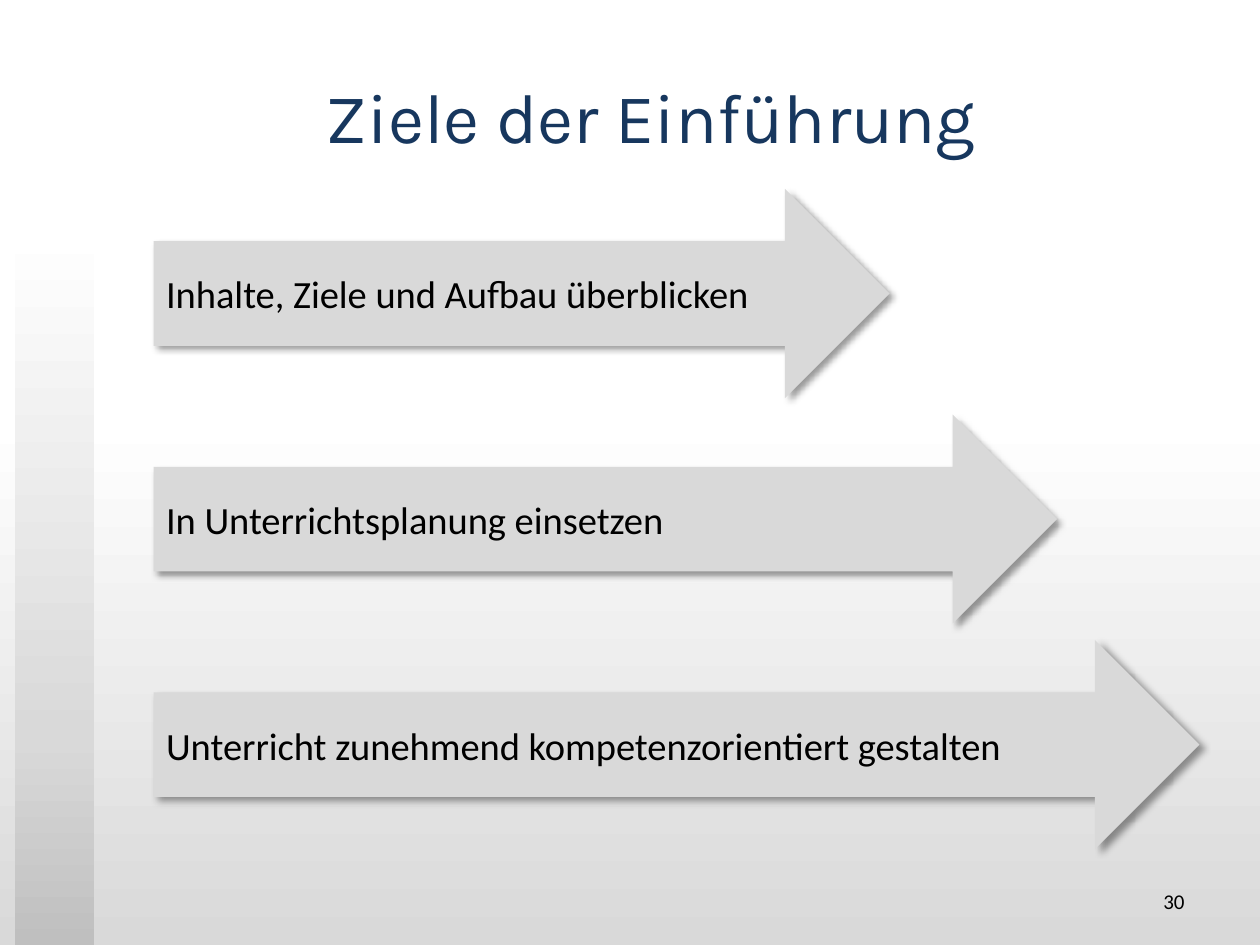
from dataclasses import dataclass, field

from lxml.etree import SubElement
from pptx import Presentation
from pptx.dml.color import RGBColor
from pptx.enum.shapes import MSO_SHAPE
from pptx.enum.text import MSO_ANCHOR, PP_ALIGN
from pptx.oxml.ns import qn
from pptx.util import Inches, Pt

COLOURS = {
    "title": "17375E",
    "text": "000000",
    "arrow": "D9D9D9",
    "white": "FFFFFF",
    "light": "D9D9D9",
    "mid": "BFBFBF",
}
CELL = 0.1
ARROW_LEFT, ARROW_TOP, ARROW_HEIGHT, ARROW_PITCH = 12.2, 15, 16.6, 17.9
GOALS = [
    ("Inhalte, Ziele und Aufbau überblicken", 58.4),
    ("In Unterrichtsplanung einsetzen", 71.7),
    ("Unterricht zunehmend kompetenzorientiert gestalten", 83),
]


def grid(*cells):
    """Turn grid columns and rows into lengths."""
    return [Inches(cell * CELL) for cell in cells]


def write(frame, text, *, size, font="Calibri", colour="text", align=PP_ALIGN.LEFT):
    """Put one formatted, vertically centred paragraph into a text frame."""
    frame.word_wrap = True
    frame.vertical_anchor = MSO_ANCHOR.MIDDLE
    para = frame.paragraphs[0]
    para.alignment = align
    span = para.add_run()
    span.text = text
    span.font.size = Pt(size)
    span.font.name = font
    span.font.color.rgb = RGBColor.from_string(COLOURS[colour])


def shade(fill, element, stops):
    """Fill from top to bottom with the given (percent, colour) stops."""
    fill.gradient()
    fill.gradient_angle = 270
    stop_list = element.xpath(".//a:gradFill/a:gsLst")[0]
    for stop in list(stop_list):
        stop_list.remove(stop)
    for percent, colour in stops:
        stop = SubElement(stop_list, qn("a:gs"), pos=str(percent * 1000))
        SubElement(stop, qn("a:srgbClr"), val=COLOURS[colour])


def cast_shadow(shape):
    """Give a shape a soft shadow to the lower right."""
    shape.shadow.inherit = False
    effects = shape.element.spPr.find(qn("a:effectLst"))
    shadow = SubElement(effects, qn("a:outerShdw"), blurRad=str(Pt(4)), dist=str(Pt(3)),
                        dir=str(45 * 60000), algn="tl", rotWithShape="0")
    colour = SubElement(shadow, qn("a:srgbClr"), val=COLOURS["text"])
    SubElement(colour, qn("a:alpha"), val="40000")


@dataclass
class GoalSlide:
    """The current page and the text sizes used on it."""

    page: object
    sizes: dict = field(default_factory=lambda: {"title": 40, "goal": 22, "number": 12})

    def background(self, stops):
        """Shade the whole page."""
        shade(self.page.background.fill, self.page.element, stops)

    def title(self, text, *cells):
        """Move the title placeholder and fill it."""
        box = self.page.shapes.title
        box.left, box.top, box.width, box.height = grid(*cells)
        write(box.text_frame, text, size=self.sizes["title"], font="Karla",
              colour="title", align=PP_ALIGN.CENTER)

    def bar(self, stops, *cells):
        """Draw the shaded bar at the side."""
        shape = self.page.shapes.add_shape(MSO_SHAPE.RECTANGLE, *grid(*cells))
        shape.shadow.inherit = False
        shape.line.fill.background()
        shade(shape.fill, shape.element, stops)

    def arrow(self, text, *cells):
        """Draw one goal as a labelled arrow."""
        shape = self.page.shapes.add_shape(MSO_SHAPE.RIGHT_ARROW, *grid(*cells))
        shape.fill.solid()
        shape.fill.fore_color.rgb = RGBColor.from_string(COLOURS["arrow"])
        shape.line.fill.background()
        cast_shadow(shape)
        write(shape.text_frame, text, size=self.sizes["goal"])

    def number(self, text, *cells):
        """Write the page number."""
        box = self.page.shapes.add_textbox(*grid(*cells))
        write(box.text_frame, text, size=self.sizes["number"], align=PP_ALIGN.RIGHT)


def main():
    """Build the slide and save it."""
    deck = Presentation()
    deck.slide_width, deck.slide_height = grid(100, 75)
    slide = GoalSlide(deck.slides.add_slide(deck.slide_layouts[5]))
    slide.background([(0, "white"), (44, "white"), (100, "light")])
    slide.bar([(24, "white"), (78, "light"), (100, "mid")], 1.2, 0, 6.3, 75)
    slide.title("Ziele der Einführung", 8.3, 4.5, 86.7, 9.3)
    slide.number("30", 71.7, 69.5, 23.3, 4)
    for row, (goal, width) in enumerate(GOALS):
        slide.arrow(goal, ARROW_LEFT, ARROW_TOP + row * ARROW_PITCH, width, ARROW_HEIGHT)
    deck.save("out.pptx")


if __name__ == "__main__":
    main()
